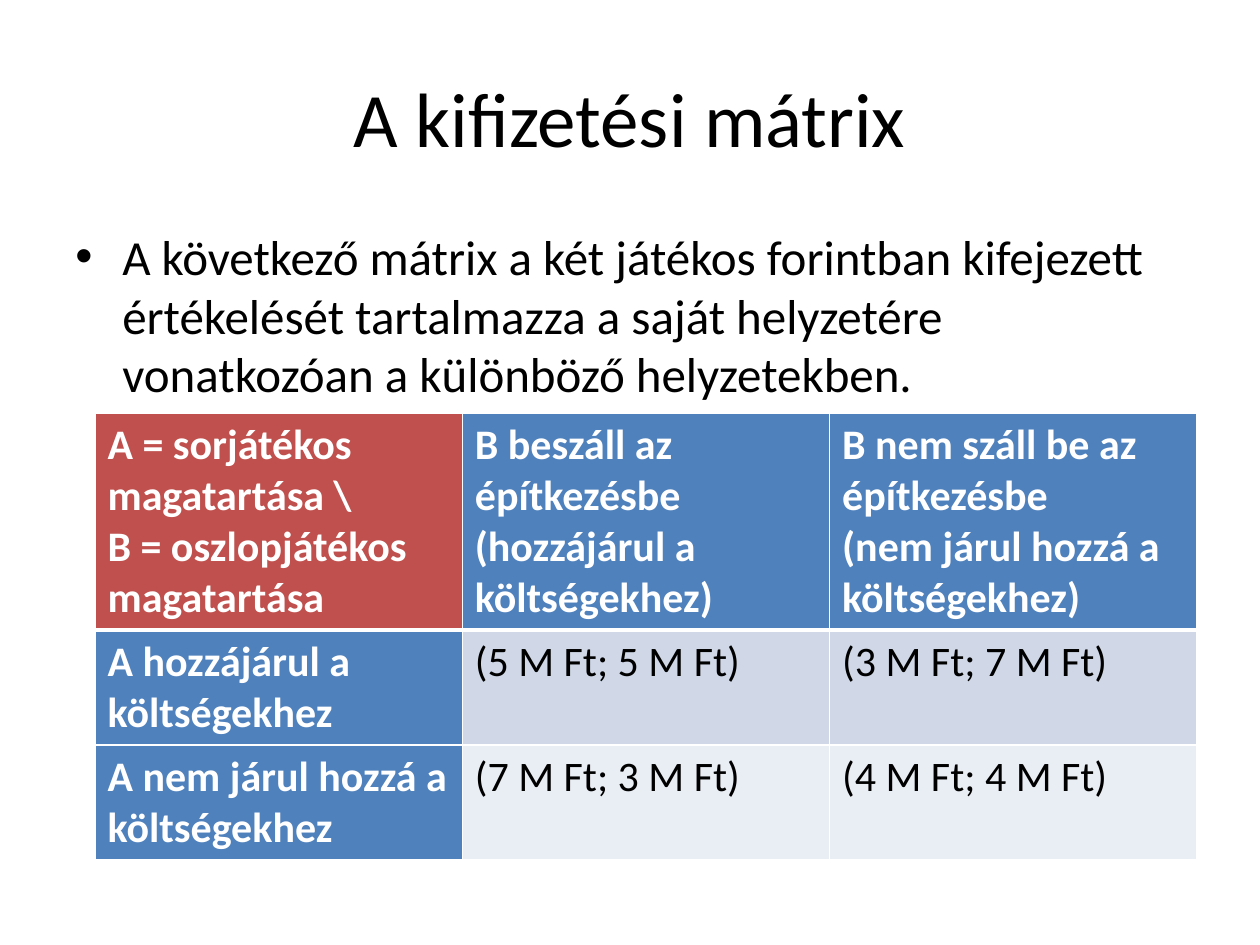
from lxml import etree
from pptx import Presentation, util as u
from pptx.dml.color import RGBColor
from pptx.enum import text as t
from pptx.oxml import ns

PX = 914400 / 126
WHITE, BLACK, BLUE, RED = "FFFFFF", "000000", "4F81BD", "C0504D"
BANDS = ["D0D8E8", "E9EDF4"]
HEADS = [
    "A = sorjátékos magatartása \\\nB = oszlopjátékos magatartása",
    "B beszáll az építkezésbe (hozzájárul a költségekhez)",
    "B nem száll be az építkezésbe\n(nem járul hozzá a költségekhez)",
]
ROWS = [
    ["A hozzájárul a költségekhez", "(5 M Ft; 5 M Ft)", "(3 M Ft; 7 M Ft)"],
    ["A nem járul hozzá a költségekhez", "(7 M Ft; 3 M Ft)", "(4 M Ft; 4 M Ft)"],
]


def px(n):
    return u.Emu(round(n * PX))


def color(code):
    return RGBColor.from_string(code)


def write(frame, words, size=24, ink=BLACK, bold=False, align=t.PP_ALIGN.LEFT):
    frame.word_wrap = True
    for i, line in enumerate(words.split("\n")):
        para = frame.add_paragraph() if i else frame.paragraphs[0]
        para.alignment = align
        run = para.add_run()
        run.text = line
        font = run.font
        font.name, font.size, font.bold = "Calibri", u.Pt(size), bold
        font.color.rgb = color(ink)


def bullet(para, indent):
    para.space_before = u.Pt(5.6)
    props = para._p.get_or_add_pPr()
    props.set("marL", str(px(indent)))
    props.set("indent", str(-px(indent)))
    etree.SubElement(props, ns.qn("a:buFont"), typeface="Arial")
    etree.SubElement(props, ns.qn("a:buChar"), char="•")


def edge(cell, **widths):
    """Draw white borders; each side is named with its width in points."""
    props = cell._tc.get_or_add_tcPr()
    for i, (side, width) in enumerate(widths.items()):
        line = etree.Element(ns.qn("a:ln" + side), w=str(u.Pt(width)))
        fill = etree.SubElement(line, ns.qn("a:solidFill"))
        etree.SubElement(fill, ns.qn("a:srgbClr"), val=WHITE)
        props.insert(i, line)


def title(slide, x, y, w, h):
    frame = slide.shapes.add_textbox(px(x), px(y), px(w), px(h)).text_frame
    frame.vertical_anchor = t.MSO_ANCHOR.MIDDLE
    write(frame, "A kifizetési mátrix", size=44, align=t.PP_ALIGN.CENTER)


def body(slide, x, y, w, h):
    frame = slide.shapes.add_textbox(px(x), px(y), px(w), px(h)).text_frame
    write(frame, "A következő mátrix a két játékos forintban kifejezett "
          "értékelését tartalmazza a saját helyzetére vonatkozóan a "
          "különböző helyzetekben.", size=28)
    bullet(frame.paragraphs[0], 47)


def matrix(slide, x, y, w, heights):
    data = [HEADS] + ROWS
    count = len(HEADS)
    grid = slide.shapes.add_table(len(data), count, px(x), px(y), px(w),
                                  px(sum(heights))).table
    for col in grid.columns:
        col.width = px(w / count)
    for r, line in enumerate(data):
        grid.rows[r].height = px(heights[r])
        for c, words in enumerate(line):
            cell = grid.cell(r, c)
            head = r == 0 or c == 0
            fill = RED if r == c == 0 else BLUE if head else BANDS[r - 1]
            cell.fill.solid()
            cell.fill.fore_color.rgb = color(fill)
            write(cell.text_frame, words, ink=WHITE if head else BLACK, bold=head)
            edge(cell, L=1, R=1, T=3 if r == 1 else 1, B=3 if r == 0 else 1)


def main():
    deck = Presentation()
    deck.slide_width, deck.slide_height = px(1260), px(945)
    slide = deck.slides.add_slide(deck.slide_layouts[6])
    title(slide, 63, 38, 1134, 157)
    body(slide, 63, 220, 1133, 624)
    matrix(slide, 95, 413, 1102, [217, 115, 115])
    deck.save("out.pptx")


if __name__ == "__main__":
    main()
